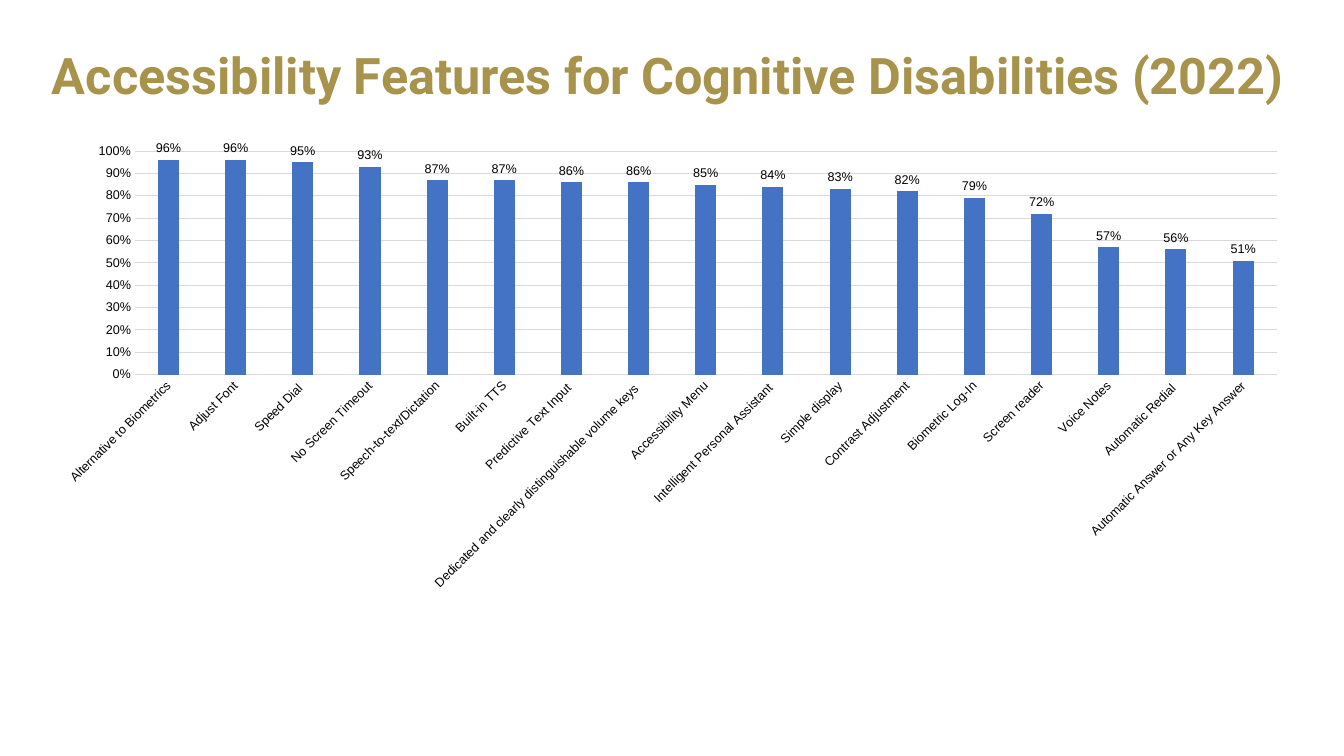
from pptx import Presentation
from pptx.chart.data import CategoryChartData
from pptx.dml.color import RGBColor
from pptx.enum.chart import XL_CHART_TYPE, XL_LABEL_POSITION, XL_TICK_MARK
from pptx.enum.text import MSO_ANCHOR, PP_ALIGN
from pptx.util import Pt

COLUMNS = XL_CHART_TYPE.COLUMN_CLUSTERED
OUTSIDE_END = XL_LABEL_POSITION.OUTSIDE_END
NO_TICK = XL_TICK_MARK.NONE
MIDDLE, LEFT = MSO_ANCHOR.MIDDLE, PP_ALIGN.LEFT

TITLE = "Accessibility Features for Cognitive Disabilities (2022)"
FEATURES = [
    ("Alternative to Biometrics", 0.96),
    ("Adjust Font", 0.96),
    ("Speed Dial ", 0.95),
    ("No Screen Timeout", 0.93),
    ("Speech-to-text/Dictation", 0.87),
    ("Built-in TTS", 0.87),
    ("Predictive Text Input ", 0.86),
    ("Dedicated and clearly distinguishable volume keys ", 0.86),
    ("Accessibility Menu", 0.85),
    ("Intelligent Personal Assistant ", 0.84),
    ("Simple display", 0.83),
    ("Contrast Adjustment", 0.82),
    ("Biometric Log-In", 0.79),
    ("Screen reader", 0.72),
    ("Voice Notes", 0.57),
    ("Automatic Redial ", 0.56),
    ("Automatic Answer or Any Key Answer", 0.51),
]
GOLD, BLUE, GRAY, BLACK = "A7934B", "4472C4", "D9D9D9", "000000"

SLIDE_W, SLIDE_H = 960, 540
MARGIN = 30
CONTENT_W = SLIDE_W - 2 * MARGIN
TITLE_TOP, TITLE_H = 16, 80
CHART_TOP, CHART_H = TITLE_TOP + TITLE_H, 332.5
LABEL_ANGLE = -45


def paint(color_format, hex_color):
    color_format.rgb = RGBColor.from_string(hex_color)


def set_font(font, hex_color, **values):
    for name, value in values.items():
        setattr(font, name, value)
    paint(font.color, hex_color)


def rule(line):
    """Give a line the thin gray look of axis and grid."""
    line.width = Pt(0.75)
    paint(line.color, GRAY)


def add_title(slide):
    box = slide.shapes.add_textbox(Pt(MARGIN), Pt(TITLE_TOP), Pt(CONTENT_W), Pt(TITLE_H))
    frame = box.text_frame
    frame.word_wrap = True
    frame.vertical_anchor = MIDDLE
    heading = frame.paragraphs[0]
    heading.alignment = LEFT
    heading.line_spacing = 0.9
    run = heading.add_run()
    run.text = TITLE
    set_font(run.font, GOLD, name="Roboto", size=Pt(36), bold=True)


def add_feature_chart(slide):
    names, shares = zip(*FEATURES)
    data = CategoryChartData(number_format="0%")
    data.categories = names
    data.add_series("Series 1", shares)
    chart = slide.shapes.add_chart(
        COLUMNS, Pt(MARGIN), Pt(CHART_TOP), Pt(CONTENT_W), Pt(CHART_H), data
    ).chart
    chart.has_title = False
    chart.has_legend = False
    set_font(chart.font, BLACK, name="Arial", size=Pt(10))

    plot = chart.plots[0]
    plot.gap_width, plot.overlap = 219, -27
    plot.vary_by_categories = False
    bars = plot.series[0]
    bars.format.fill.solid()
    paint(bars.format.fill.fore_color, BLUE)

    labels = bars.data_labels
    label_format = {
        "show_value": True,
        "position": OUTSIDE_END,
        "number_format": "0%",
        "number_format_is_linked": False,
    }
    for name, value in label_format.items():
        setattr(labels, name, value)

    feature_axis, share_axis = chart.category_axis, chart.value_axis
    for part in (feature_axis.tick_labels, share_axis.tick_labels, labels):
        set_font(part.font, BLACK, name="Arial", size=Pt(9), bold=False)
    for axis in (feature_axis, share_axis):
        axis.major_tick_mark = axis.minor_tick_mark = NO_TICK

    rule(feature_axis.format.line)
    label_body = feature_axis._element.txPr.bodyPr
    label_body.set("rot", str(LABEL_ANGLE * 60000))
    label_body.set("vert", "horz")

    share_axis.minimum_scale, share_axis.maximum_scale = 0, 1
    share_axis.major_unit = 0.1
    share_axis.tick_labels.number_format = "0%"
    share_axis.tick_labels.number_format_is_linked = False
    share_axis.format.line.fill.background()
    share_axis.has_major_gridlines = True
    rule(share_axis.major_gridlines.format.line)


def main():
    deck = Presentation()
    deck.slide_width, deck.slide_height = Pt(SLIDE_W), Pt(SLIDE_H)
    slide = deck.slides.add_slide(deck.slide_layouts[6])
    add_title(slide)
    add_feature_chart(slide)
    deck.save("out.pptx")


if __name__ == "__main__":
    main()
